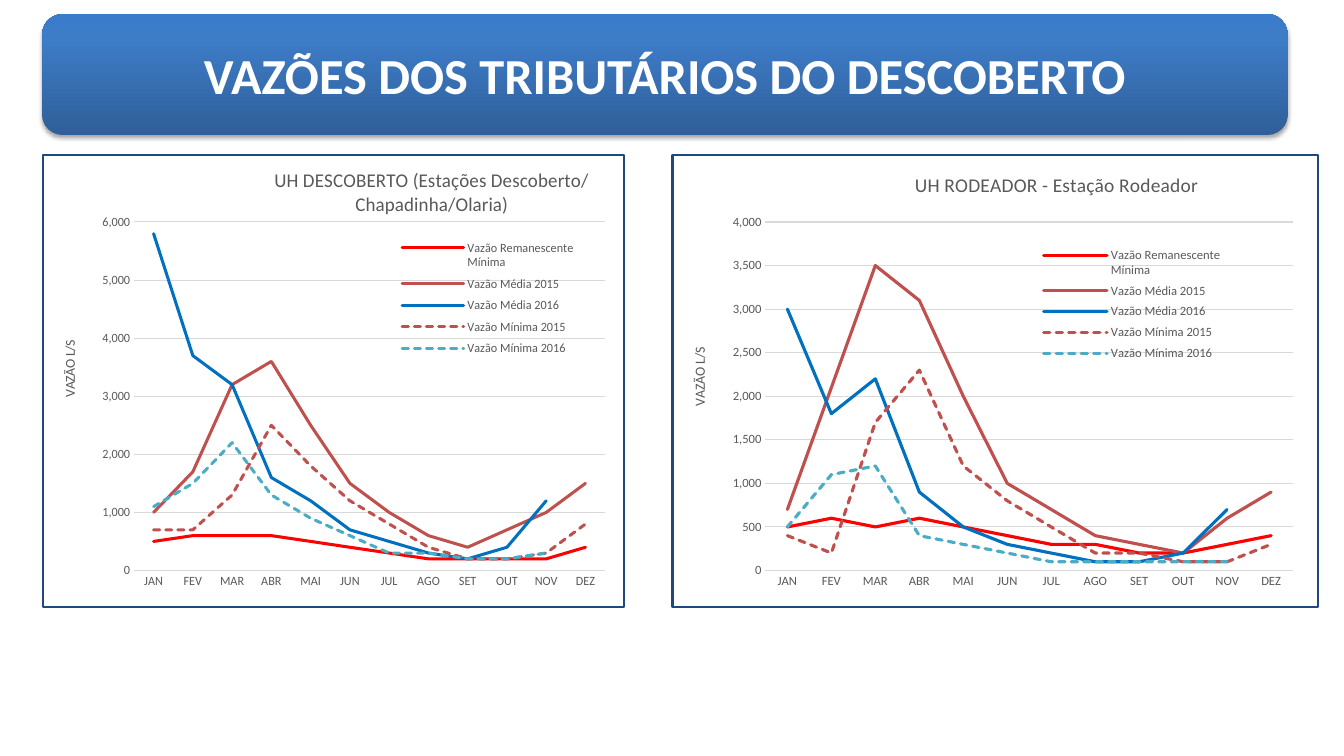
from pptx import Presentation
from pptx.chart.data import CategoryChartData
from pptx.dml.color import RGBColor
from pptx.enum.chart import XL_CHART_TYPE, XL_LEGEND_POSITION, XL_TICK_MARK
from pptx.enum.dml import MSO_LINE
from pptx.enum.shapes import MSO_SHAPE
from pptx.enum.text import MSO_ANCHOR, PP_ALIGN
from pptx.oxml import parse_xml
from pptx.oxml.ns import nsdecls, qn
from pptx.util import Inches, Pt

FONT = "Calibri"
HUES = {
    "white": "FFFFFF", "black": "000000", "text": "595959", "grid": "D9D9D9",
    "navy": "1F497D", "red": "FF0000", "brick": "C0504D", "blue": "0070C0",
    "teal": "4BACC6", "low": "2F5F99", "mid": "3D7CC7", "top": "3A7CCB",
}
MONTHS = ["JAN", "FEV", "MAR", "ABR", "MAI", "JUN",
          "JUL", "AGO", "SET", "OUT", "NOV", "DEZ"]
LINES = [
    ("Vazão Remanescente Mínima", "red", False),
    ("Vazão Média 2015", "brick", False),
    ("Vazão Média 2016", "blue", False),
    ("Vazão Mínima 2015", "brick", True),
    ("Vazão Mínima 2016", "teal", True),
]
CHARTS = [
    {
        "title": "UH DESCOBERTO (Estações Descoberto/Chapadinha/Olaria)",
        "left": 0.42, "width": 5.96, "peak": 6000,
        "head": (0.305, 0.017), "side": (0.026, 0.4),
        "key": (0.61, 0.174, 0.31, 0.285),
        "plot": (0.156, 0.148, 0.811, 0.772),
        "rows": [
            [500, 600, 600, 600, 500, 400, 300, 200, 200, 200, 200, 400],
            [1000, 1700, 3200, 3600, 2500, 1500, 1000, 600, 400, 700, 1000, 1500],
            [5800, 3700, 3200, 1600, 1200, 700, 500, 300, 200, 400, 1200, None],
            [700, 700, 1300, 2500, 1800, 1200, 800, 400, 200, 200, 300, 800],
            [1100, 1500, 2200, 1300, 900, 600, 300, 300, 200, 200, 300, None],
        ],
    },
    {
        "title": "UH RODEADOR - Estação Rodeador",
        "left": 6.66, "width": 6.42, "peak": None,
        "head": (0.37, 0.027), "side": (0.024, 0.42),
        "key": (0.562, 0.192, 0.3, 0.277),
        "plot": (0.144, 0.148, 0.818, 0.772),
        "rows": [
            [500, 600, 500, 600, 500, 400, 300, 300, 200, 200, 300, 400],
            [700, 2100, 3500, 3100, 2000, 1000, 700, 400, 300, 200, 600, 900],
            [3000, 1800, 2200, 900, 500, 300, 200, 100, 100, 200, 700, None],
            [400, 200, 1700, 2300, 1200, 800, 500, 200, 200, 100, 100, 300],
            [500, 1100, 1200, 400, 300, 200, 100, 100, 100, 100, 100, None],
        ],
    },
]


def style(font, size, hue, bold=False):
    font.name, font.size, font.bold = FONT, Pt(size), bold
    font.color.rgb = RGBColor.from_string(HUES[hue])


def write(frame, text, size=10, hue="text", bold=False):
    para = frame.paragraphs[0]
    para.alignment = PP_ALIGN.CENTER
    run = para.add_run()
    run.text = text
    style(run.font, size, hue, bold)


def stroke(line, hue, width):
    line.color.rgb = RGBColor.from_string(HUES[hue])
    line.width = Pt(width)


def place(node, index, box, inner=False):
    old = node.find(qn("c:layout"))
    if old is not None:
        node.remove(old)
    tags = '<c:layoutTarget val="inner"/>' if inner else ""
    tags += '<c:xMode val="edge"/><c:yMode val="edge"/>'
    tags += "".join(f'<c:{tag} val="{val}"/>' for tag, val in zip("xywh", box))
    node.insert(index, parse_xml(
        f'<c:layout {nsdecls("c")}><c:manualLayout>{tags}</c:manualLayout></c:layout>'))


def add_band(slide, box):
    band = slide.shapes.add_shape(MSO_SHAPE.ROUNDED_RECTANGLE, *box)
    stops = "".join(
        f'<a:gs pos="{pos}"><a:srgbClr val="{HUES[hue]}"/></a:gs>'
        for pos, hue in ((0, "low"), (80000, "mid"), (100000, "top")))
    names = nsdecls("a")
    for part in (
        f'<a:gradFill {names}><a:gsLst>{stops}</a:gsLst>'
        '<a:lin ang="16200000" scaled="0"/></a:gradFill>',
        f'<a:ln {names}><a:noFill/></a:ln>',
        f'<a:effectLst {names}><a:outerShdw blurRad="40000" dist="23000" '
        f'dir="5400000" rotWithShape="0"><a:srgbClr val="{HUES["black"]}">'
        '<a:alpha val="35000"/></a:srgbClr></a:outerShdw></a:effectLst>',
    ):
        band._element.spPr.append(parse_xml(part))
    return band


def add_title(slide, text):
    box = [Inches(size) for size in (0.42, 0.14, 12.35, 1.2)]
    title = slide.shapes.title
    title.left, title.top, title.width, title.height = box
    title._element.addprevious(add_band(slide, box)._element)
    title.text_frame.vertical_anchor = MSO_ANCHOR.MIDDLE
    write(title.text_frame, text, size=36, hue="white", bold=True)


def add_frame(chart):
    root = chart._element
    root.find(qn("c:date1904")).addnext(
        parse_xml(f'<c:roundedCorners {nsdecls("c")} val="0"/>'))
    root.find(qn("c:chart")).addnext(parse_xml(
        f'<c:spPr {nsdecls("c", "a")}>'
        f'<a:solidFill><a:srgbClr val="{HUES["white"]}"/></a:solidFill>'
        f'<a:ln w="{Pt(1.5)}"><a:solidFill><a:srgbClr val="{HUES["navy"]}"/>'
        '</a:solidFill></a:ln></c:spPr>'))


def set_axes(chart, peak, side):
    months, flow = chart.category_axis, chart.value_axis
    for axis in (months, flow):
        axis.major_tick_mark = axis.minor_tick_mark = XL_TICK_MARK.NONE
        style(axis.tick_labels.font, 9, "text")
    stroke(months.format.line, "grid", 0.75)
    flow.format.line.fill.background()
    flow.has_major_gridlines = True
    stroke(flow.major_gridlines.format.line, "grid", 0.75)
    flow.minimum_scale, flow.maximum_scale = 0, peak
    flow.tick_labels.number_format = "#,##0"
    flow.tick_labels.number_format_is_linked = False
    name = flow.axis_title
    write(name.text_frame, "VAZÃO L/S")
    body = name._element.find(".//" + qn("a:bodyPr"))
    body.set("rot", "-5400000")
    body.set("vert", "horz")
    place(name._element, 1, side)


def add_lines(slide, item):
    data = CategoryChartData(number_format="#,##0")
    data.categories = MONTHS
    for (name, _, _), row in zip(LINES, item["rows"]):
        data.add_series(name, row)
    chart = slide.shapes.add_chart(
        XL_CHART_TYPE.LINE, Inches(item["left"]), Inches(1.53),
        Inches(item["width"]), Inches(4.5), data).chart
    style(chart.font, 10, "black")
    add_frame(chart)
    chart.has_title = True
    write(chart.chart_title.text_frame, item["title"], size=14)
    place(chart.chart_title._element, 1, item["head"])
    set_axes(chart, item["peak"], item["side"])
    chart.has_legend = True
    key = chart.legend
    key.position = XL_LEGEND_POSITION.RIGHT
    key.include_in_layout = False
    style(key.font, 9, "text")
    place(key._element, 1, item["key"])
    place(chart._element.find(".//" + qn("c:plotArea")), 0, item["plot"], inner=True)
    plot = chart.plots[0]
    plot.vary_by_categories = False
    for (_, hue, dash), series in zip(LINES, plot.series):
        series.smooth = False
        stroke(series.format.line, hue, 2.25)
        if dash:
            series.format.line.dash_style = MSO_LINE.SQUARE_DOT
        pen = series._element.find(".//" + qn("a:ln"))
        pen.set("cap", "rnd")
        pen.append(parse_xml(f'<a:round {nsdecls("a")}/>'))


def main():
    deck = Presentation()
    deck.slide_width, deck.slide_height = Inches(13.33), Inches(7.5)
    slide = deck.slides.add_slide(deck.slide_layouts[5])
    add_title(slide, "VAZÕES DOS TRIBUTÁRIOS DO DESCOBERTO")
    for item in CHARTS:
        add_lines(slide, item)
    deck.save("out.pptx")


if __name__ == "__main__":
    main()
